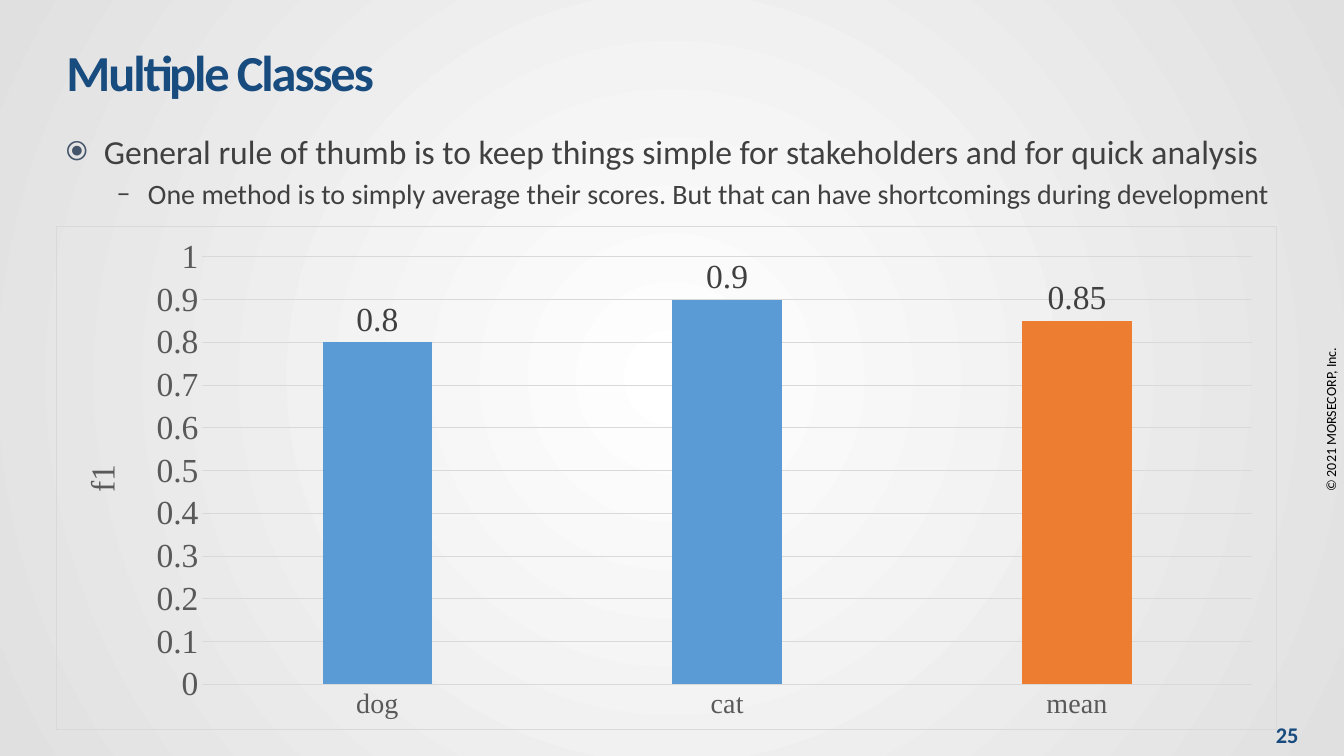
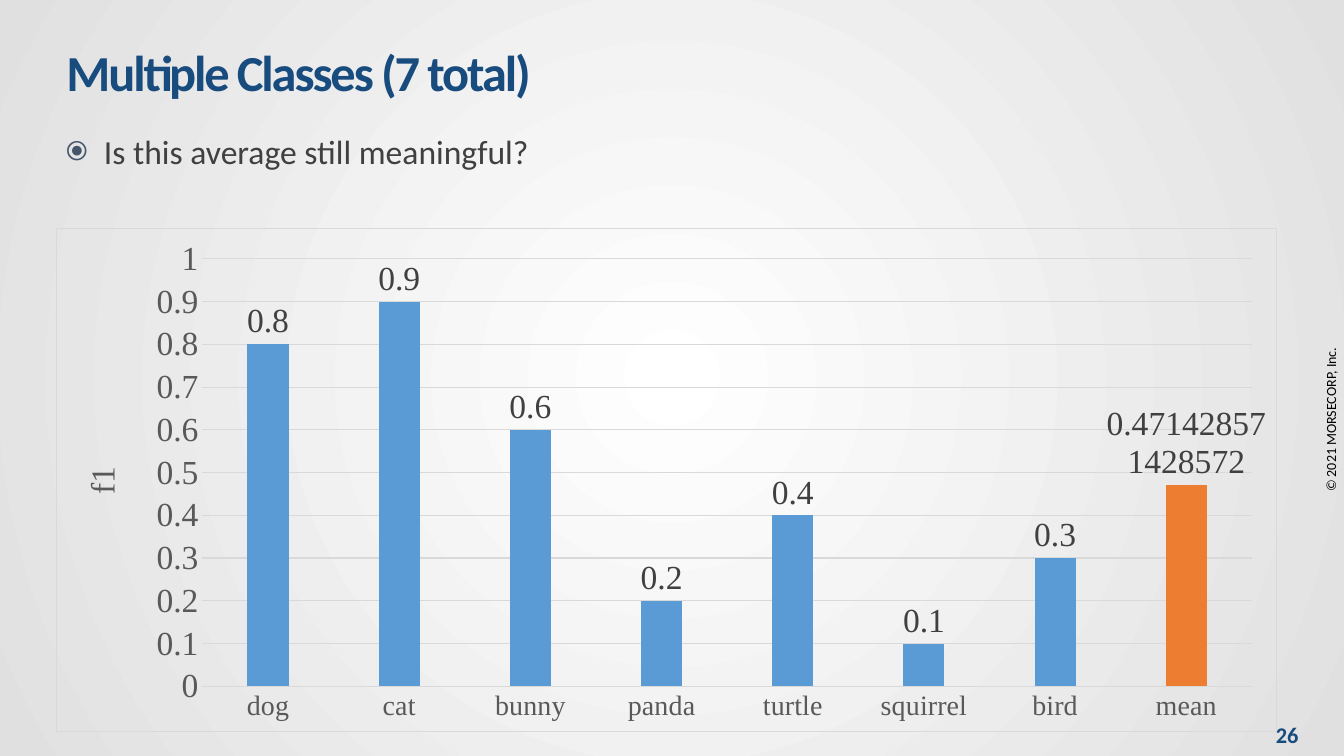
from lxml.etree import SubElement as Sub
from pptx import Presentation
from pptx.chart.data import CategoryChartData as Data
from pptx.dml.color import RGBColor
from pptx.enum.chart import XL_CHART_TYPE as Kind, XL_LABEL_POSITION as Spot, XL_TICK_MARK as Tick
from pptx.enum.text import MSO_ANCHOR as Anchor, PP_ALIGN as Align
from pptx.oxml import parse_xml
from pptx.oxml.ns import nsdecls, qn
from pptx.util import Cm, Pt

SANS, SERIF = "Calibri", "Times New Roman"
NAVY, DARK, GREY, RULE = "184B7E", "404040", "595959", "D9D9D9"
BLUE, ORANGE, SLATE = "5B9BD5", "ED7D31", "44546A"
LEFT = 1.42
BULLETS = [
    {"char": "⦿", "size": 24, "left": 0.95, "hang": 0.95, "mark": SLATE},
    {"char": "–", "size": 20, "left": 2.06, "hang": 0.79, "mark": None},
]


def rgb(code):
    """Turn a hex string into a colour."""
    return RGBColor.from_string(code)


def style(font, size, color, name=SANS, bold=False):
    """Set the face, size and colour of a font."""
    font.name, font.size, font.bold = name, Pt(size), bold
    font.color.rgb = rgb(color)


def write(para, text, size=24, color=DARK, bold=False, align=Align.LEFT, track=0):
    """Write one formatted run into a paragraph."""
    para.alignment = align
    run = para.add_run()
    run.text = text
    style(run.font, size, color, bold=bold)
    if track:
        run.font._element.set("spc", str(int(track * 100)))


def add_box(slide, left, top, width, height, anchor=Anchor.TOP):
    """Add a wrapping text box, lengths in centimetres."""
    box = slide.shapes.add_textbox(Cm(left), Cm(top), Cm(width), Cm(height))
    box.text_frame.word_wrap = True
    box.text_frame.vertical_anchor = anchor
    return box


def add_mark(para, char, left, hang, mark):
    """Give a paragraph a bullet and a hanging indent."""
    props = para._p.get_or_add_pPr()
    props.set("marL", str(Cm(left)))
    props.set("indent", str(-Cm(hang)))
    if mark:
        Sub(Sub(props, qn("a:buClr")), qn("a:srgbClr")).set("val", mark)
        Sub(props, qn("a:buSzPct")).set("val", "80000")
    Sub(props, qn("a:buFont")).set("typeface", SANS)
    Sub(props, qn("a:buChar")).set("char", char)


def add_points(slide, points):
    """Add the bullet list, given as (level, text) pairs."""
    frame = add_box(slide, LEFT, 3.18, 32.03, 2.4).text_frame
    for i, (level, text) in enumerate(points):
        para = frame.add_paragraph() if i else frame.paragraphs[0]
        look = BULLETS[level]
        para.level = level
        add_mark(para, look["char"], look["left"], look["hang"], look["mark"])
        if i:
            para.space_before = Pt(3.5)
        write(para, text, size=look["size"])


def set_back(master):
    """Give the master its radial grey background."""
    fill = master.background.fill
    fill.gradient()
    for stop, code in zip(fill.gradient_stops, ("FFFFFF", "E0E0E0")):
        stop.color.rgb = rgb(code)
    grad = master.element.find(".//" + qn("a:gradFill"))
    grad.remove(grad.find(qn("a:lin")))
    ring = Sub(grad, qn("a:path"))
    ring.set("path", "circle")
    rect = Sub(ring, qn("a:fillToRect"))
    for side in "ltrb":
        rect.set(side, "50000")


def add_slide(prs, title, number):
    """Add a slide with its title, copyright line and number."""
    slide = prs.slides.add_slide(prs.slide_layouts[5])
    head = slide.shapes.title
    head.left, head.top, head.width, head.height = Cm(LEFT), Cm(0.84), Cm(29.29), Cm(1.9)
    head.text_frame.vertical_anchor = Anchor.MIDDLE
    write(head.text_frame.paragraphs[0], title, size=36, color=NAVY, bold=True, track=-1.5)
    side = add_box(slide, 27.23, 10.23, 12.6, 0.69, Anchor.MIDDLE)
    side.rotation = 270
    write(side.text_frame.paragraphs[0], "© 2021 MORSECORP, Inc.", size=10,
          color="000000", align=Align.CENTER)
    foot = add_box(slide, 31.82, 18.16, 1.24, 0.71, Anchor.MIDDLE)
    write(foot.text_frame.paragraphs[0], str(number), size=16, color=NAVY,
          bold=True, align=Align.CENTER)
    return slide


def set_frame(chart):
    """Outline the chart and fix its inner plot area."""
    chart.font._element.getparent().getparent().getparent().addprevious(parse_xml(
        f'<c:spPr {nsdecls("c", "a")}><a:noFill/><a:ln w="9525"><a:solidFill>'
        f'<a:srgbClr val="{RULE}"/></a:solidFill></a:ln></c:spPr>'))
    plot = chart._chartSpace.chart.plotArea
    for old in plot.findall(qn("c:layout")):
        plot.remove(old)
    layout = Sub(plot, qn("c:layout"))
    plot.insert(0, layout)
    inner = Sub(layout, qn("c:manualLayout"))
    parts = {"layoutTarget": "inner", "xMode": "edge", "yMode": "edge",
             "x": 0.12, "y": 0.06, "w": 0.86, "h": 0.85}
    for tag, val in parts.items():
        Sub(inner, qn("c:" + tag)).set("val", str(val))


def set_axes(chart):
    """Format both axes, the grid and the axis title."""
    for axis, size in ((chart.category_axis, 20), (chart.value_axis, 24)):
        axis.major_tick_mark = axis.minor_tick_mark = Tick.NONE
        style(axis.tick_labels.font, size, GREY, SERIF)
    base, axis = chart.category_axis.format.line, chart.value_axis
    axis.minimum_scale, axis.maximum_scale, axis.major_unit = 0, 1, 0.1
    axis.has_major_gridlines = True
    for line in (base, axis.major_gridlines.format.line):
        line.width = Pt(0.75)
        line.color.rgb = rgb(RULE)
    axis.format.line.fill.background()
    frame = axis.axis_title.text_frame
    frame.text = "f1"
    style(frame.paragraphs[0].runs[0].font, 24, GREY, SERIF)
    turn = frame._txBody.find(qn("a:bodyPr"))
    turn.set("rot", "-5400000")
    turn.set("vert", "horz")


def add_bars(slide, top, scores, note=None):
    """Add the score chart, with the last bar in orange and an optional own label."""
    data = Data()
    data.categories = list(scores)
    data.add_series("Series 1", list(scores.values()))
    chart = slide.shapes.add_chart(Kind.COLUMN_CLUSTERED, Cm(1.4), Cm(top),
                                   Cm(30.78), Cm(12.7), data).chart
    chart.has_legend = chart.has_title = False
    style(chart.font, 24, "000000", SERIF)
    set_frame(chart)
    set_axes(chart)
    plot = chart.plots[0]
    plot.gap_width, plot.overlap, plot.vary_by_categories = 219, -27, False
    bars = plot.series[0]
    last = bars.points[len(scores) - 1]
    for item, code in ((bars, BLUE), (last, ORANGE)):
        item.format.fill.solid()
        item.format.fill.fore_color.rgb = rgb(code)
    tags = bars.data_labels
    tags.show_value, tags.position = True, Spot.OUTSIDE_END
    style(tags.font, 24, DARK, SERIF)
    if note:
        tag = last.data_label
        tag.text_frame.text = note
        tag.position = Spot.OUTSIDE_END
        for para in tag.text_frame.paragraphs:
            style(para.runs[0].font, 24, DARK, SERIF)


def main():
    """Build and save both slides."""
    prs = Presentation()
    prs.slide_width, prs.slide_height = Cm(33.87), Cm(19.05)
    set_back(prs.slide_master)

    slide = add_slide(prs, "Multiple Classes", 25)
    add_points(slide, [
        (0, "General rule of thumb is to keep things simple for stakeholders and for quick analysis"),
        (1, "One method is to simply average their scores. But that can have shortcomings during development"),
    ])
    add_bars(slide, 5.7, {"dog": 0.8, "cat": 0.9, "mean": 0.85})

    slide = add_slide(prs, "Multiple Classes (7 total)", 26)
    add_points(slide, [(0, "Is this average still meaningful?")])
    add_bars(slide, 5.75, {"dog": 0.8, "cat": 0.9, "bunny": 0.6, "panda": 0.2, "turtle": 0.4,
                           "squirrel": 0.1, "bird": 0.3, "mean": 0.4714},
             note="0.47142857\n1428572")
    prs.save("out.pptx")


if __name__ == "__main__":
    main()
